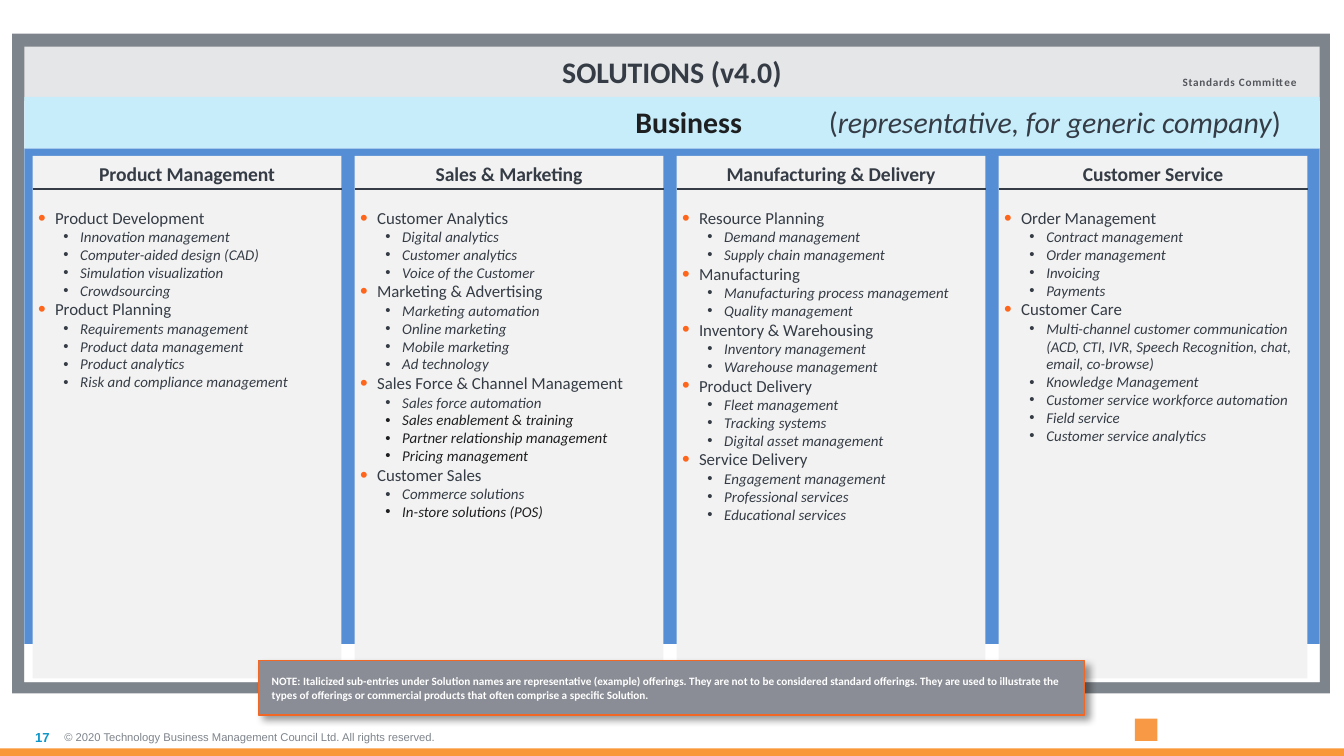
from lxml import etree
from pptx import Presentation
from pptx.dml.color import RGBColor
from pptx.enum import shapes, text
from pptx.oxml.ns import qn
from pptx.util import Pt

color = RGBColor.from_string
SLATE, INK, ORANGE = "353C45", "1E1F21", "FF661C"
TOP, MIDDLE = text.MSO_ANCHOR.TOP, text.MSO_ANCHOR.MIDDLE
CENTER, RIGHT = text.PP_ALIGN.CENTER, text.PP_ALIGN.RIGHT


def box(left, top, width, height, fill=None, inset=(7.2, 3.6), anchor=TOP):
    """Add a filled rectangle, or a plain text box when there is no fill."""
    place = Pt(left), Pt(top), Pt(width), Pt(height)
    if fill:
        shape = slide.shapes.add_shape(shapes.MSO_SHAPE.RECTANGLE, *place)
        shape.shadow.inherit = False
        shape.fill.solid()
        shape.fill.fore_color.rgb = color(fill)
        shape.line.fill.background()
    else:
        shape = slide.shapes.add_textbox(*place)
    frame = shape.text_frame
    frame.word_wrap = True
    frame.vertical_anchor = anchor
    frame.margin_left = frame.margin_right = Pt(inset[0])
    frame.margin_top = frame.margin_bottom = Pt(inset[1])
    return shape


def write(paragraph, words, size, ink=SLATE, font="Calibri", bold=False,
          italic=False, align=text.PP_ALIGN.LEFT):
    """Add one formatted run to a paragraph."""
    paragraph.alignment = align
    run = paragraph.add_run()
    run.text = words
    run.font.size, run.font.name = Pt(size), font
    run.font.bold, run.font.italic = bold, italic
    run.font.color.rgb = color(ink)
    return run


solutions = {
    "Product Management": {
        "Product Development": ["Innovation management", "Computer-aided design (CAD)",
                                "Simulation visualization", "Crowdsourcing"],
        "Product Planning": ["Requirements management", "Product data management",
                             "Product analytics", "Risk and compliance management"],
    },
    "Sales & Marketing": {
        "Customer Analytics": ["Digital analytics", "Customer analytics",
                               "Voice of the Customer"],
        "Marketing & Advertising": ["Marketing automation", "Online marketing",
                                    "Mobile marketing", "Ad technology"],
        "Sales Force & Channel Management": [
            "Sales force automation", "Sales enablement & training",
            "Partner relationship management", "Pricing management"],
        "Customer Sales": ["Commerce solutions", "In-store solutions (POS)"],
    },
    "Manufacturing & Delivery": {
        "Resource Planning": ["Demand management", "Supply chain management"],
        "Manufacturing": ["Manufacturing process management", "Quality management"],
        "Inventory & Warehousing": ["Inventory management", "Warehouse management"],
        "Product Delivery": ["Fleet management", "Tracking systems",
                             "Digital asset management"],
        "Service Delivery": ["Engagement management", "Professional services",
                             "Educational services"],
    },
    "Customer Service": {
        "Order Management": ["Contract management", "Order management",
                             "Invoicing", "Payments"],
        "Customer Care": [
            "Multi-channel customer communication (ACD, CTI, IVR, Speech Recognition, "
            "chat, email, co-browse)",
            "Knowledge Management", "Customer service workforce automation",
            "Field service", "Customer service analytics"],
    },
}
darker_offerings = {"Sales enablement & training", "Partner relationship management",
                    "Pricing management", "In-store solutions (POS)"}

deck = Presentation()
deck.slide_width, deck.slide_height = Pt(720), Pt(405)
slide = deck.slides.add_slide(deck.slide_layouts[5])

# Footer: copyright, page number, emblem and bottom band
copyright_line = box(34.5, 384.5, 242, 21, inset=(0, 0), anchor=MIDDLE)
write(copyright_line.text_frame.paragraphs[0],
      "© 2020 Technology Business Management Council Ltd. All rights reserved.",
      6, "7E848B", "Arial")
page_number = box(0, 384.5, 26.5, 21, inset=(0, 0), anchor=MIDDLE)
write(page_number.text_frame.paragraphs[0], "17", 7, "0D96C9", "Arial",
      bold=True, align=RIGHT)
box(608, 385, 12, 12, "F89946")
box(0, 401, 720, 4, "F89838")

# Outer frame, with the title panel on top of it
box(6.5, 18, 706, 353.5, "7E848B")
title = slide.shapes.title
title.element.getparent().append(title.element)
title.left, title.top, title.width, title.height = Pt(13), Pt(25), Pt(694), Pt(340.5)
title.fill.solid()
title.fill.fore_color.rgb = color("E5E6E8")
title.text_frame.vertical_anchor = TOP
write(title.text_frame.paragraphs[0], "SOLUTIONS (v4.0)", 16, bold=True, align=CENTER)

# White ground, committee label and blue field
box(13, 54, 694, 311.5, "FFFFFF")
committee = box(633.5, 40.5, 62.5, 7.2, inset=(0, 0))
committee.text_frame.word_wrap = False
label = write(committee.text_frame.paragraphs[0], "Standards Committee", 6,
              "53565C", bold=True)
label.font._element.set("spc", "40")
box(13, 79.5, 694, 265.5, "558ED5")

# Business band, laid out with a centre and a right tab
business = box(13, 52, 694, 27.5, "C7EDFB").text_frame.paragraphs[0]
tabs = etree.SubElement(business._p.get_or_add_pPr(), qn("a:tabLst"))
for position, kind in [(337, "ctr"), (652.5, "r")]:
    etree.SubElement(tabs, qn("a:tab"), pos=str(Pt(position)), algn=kind)
write(business, "\tBusiness \t", 16, INK, bold=True, align=CENTER)
write(business, "(", 16, align=CENTER)
write(business, "representative, for generic company", 16, italic=True, align=CENTER)
write(business, ")", 16, align=CENTER)

# Four solution columns
for column, (heading, groups) in enumerate(solutions.items()):
    left, width = 17.5 + column * 172.5, 165.5
    frame = box(left, 83.5, width, 280, "F2F2F2", inset=(3, 3)).text_frame
    frame.paragraphs[0].space_after = Pt(12)
    write(frame.paragraphs[0], heading, 10.5, bold=True, align=CENTER)

    entries = []
    for group, offerings in groups.items():
        entries += [(1, group)] + [(2, offering) for offering in offerings]
    for level, entry in entries:
        paragraph = frame.add_paragraph()
        paragraph.level = level
        layout = paragraph._p.get_or_add_pPr()
        layout.set("marL", str(Pt(9 if level == 1 else 22.5)))
        layout.set("indent", str(Pt(-9)))
        if level == 1:
            bullet_color = etree.SubElement(layout, qn("a:buClr"))
            etree.SubElement(bullet_color, qn("a:srgbClr"), val=ORANGE)
            etree.SubElement(layout, qn("a:buSzPct"), val="130000")
        etree.SubElement(layout, qn("a:buFont"), typeface="Arial")
        etree.SubElement(layout, qn("a:buChar"), char="•")
        write(paragraph, entry, 9 if level == 1 else 8,
              INK if entry in darker_offerings else SLATE, italic=level == 2)

    rule = slide.shapes.add_connector(shapes.MSO_CONNECTOR.STRAIGHT, Pt(left), Pt(101.5),
                                      Pt(left + width), Pt(101.5))
    rule.line.color.rgb = color(SLATE)
    rule.line.width = Pt(1)
    etree.SubElement(rule._element.spPr, qn("a:effectLst"))

# Note with a soft shadow
note = box(138.5, 354, 442.5, 29, "8A8D95", inset=(7.2, 7.2), anchor=MIDDLE)
note.line.color.rgb = color("F26724")
note.line.width = Pt(0.75)
shadow = etree.SubElement(note.element.spPr.find(qn("a:effectLst")), qn("a:outerShdw"),
                          blurRad=str(Pt(4)), dist=str(Pt(3)), dir="2700000",
                          algn="tl", rotWithShape="0")
shade = etree.SubElement(shadow, qn("a:srgbClr"), val="000000")
etree.SubElement(shade, qn("a:alpha"), val="40000")
write(note.text_frame.paragraphs[0],
      "NOTE: Italicized sub-entries under Solution names are representative (example) "
      "offerings. They are not to be considered standard offerings. They are used to "
      "illustrate the types of offerings or commercial products that often comprise a "
      "specific Solution.", 6, "FFFFFF", bold=True)

deck.save("out.pptx")
